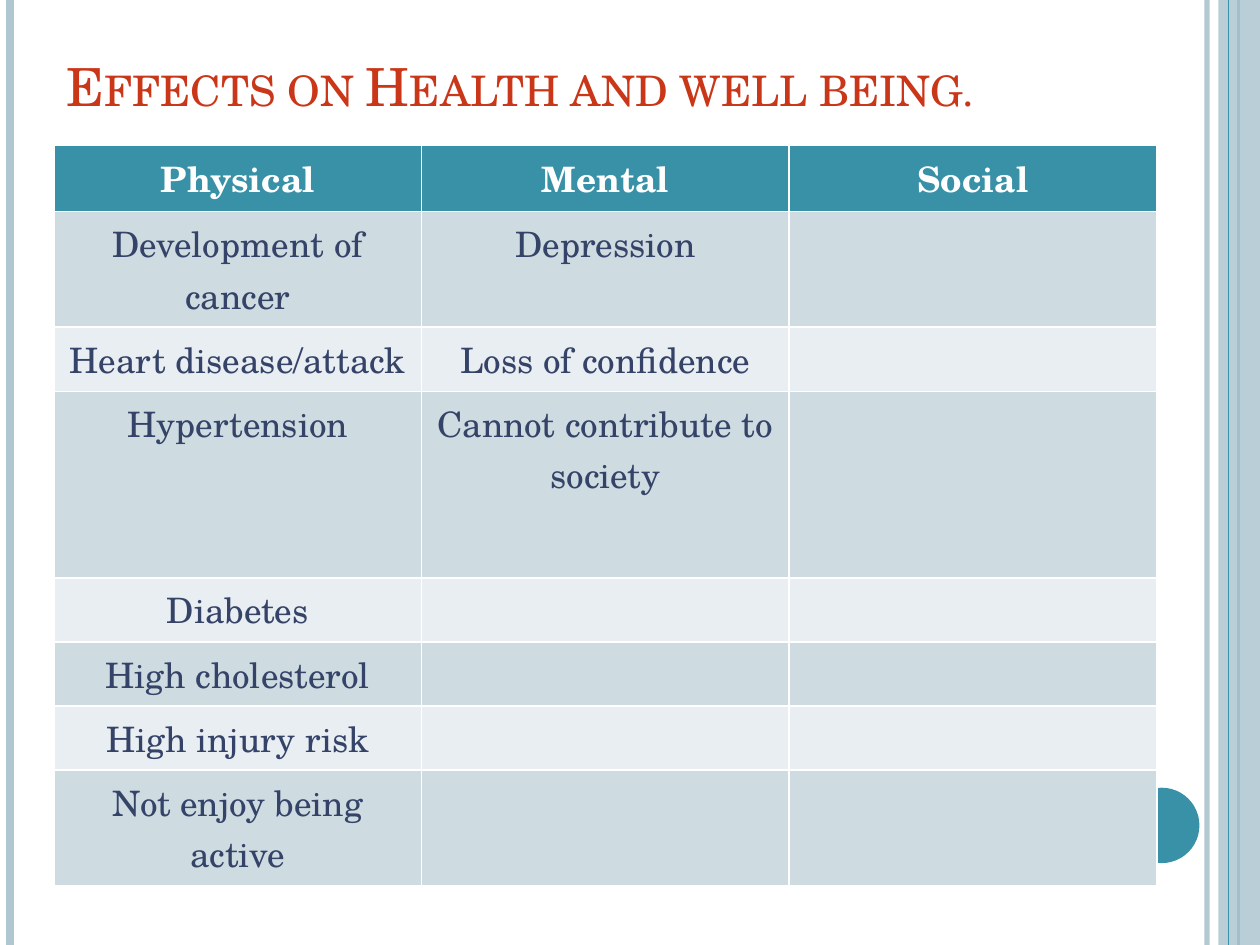
import dataclasses
import typing

import lxml.etree
import pptx
import pptx.dml.color
import pptx.enum.shapes
import pptx.enum.text
import pptx.oxml.ns
import pptx.util

Cm = pptx.util.Cm
RGBColor = pptx.dml.color.RGBColor

WHITE = RGBColor(0xFF, 0xFF, 0xFF)
TEAL = RGBColor(0x38, 0x91, 0xA7)
MIST = RGBColor(0xAF, 0xC7, 0xD0)
RED = RGBColor(0xCA, 0x36, 0x18)
NAVY = RGBColor(0x35, 0x43, 0x69)
BAND_DARK = RGBColor(0xCE, 0xDC, 0xE1)
BAND_LIGHT = RGBColor(0xE8, 0xEE, 0xF1)
FONT = "TeX Gyre Schola"
PAGE_WIDTH, PAGE_HEIGHT = Cm(25.4), Cm(19.05)
COLUMN_WIDTH = Cm(7.41)


@dataclasses.dataclass
class Stripe:
    x: float
    color: RGBColor
    weight: float
    opacity: int = 100


@dataclasses.dataclass
class Panel:
    kind: int
    left: float
    top: float
    width: float
    height: float
    color: RGBColor
    opacity: int = 100


@dataclasses.dataclass
class EffectRow:
    height: float
    physical: str
    mental: str = ""
    social: str = ""


DECORATIONS = [
    Stripe(24.33, MIST, 3, 93),
    Stripe(0.2, MIST, 4.5),
    Stripe(24.97, TEAL, 1.5),
    Panel(pptx.enum.shapes.MSO_SHAPE.RECTANGLE, 24.56, 0, 0.84, 19.05, MIST, 87),
    Stripe(24.77, TEAL, 0.75),
    Panel(pptx.enum.shapes.MSO_SHAPE.OVAL, 22.66, 15.88, 1.52, 1.52, TEAL),
]
EFFECTS = [
    EffectRow(1.17, "Physical", "Mental", "Social"),
    EffectRow(2.03, "Development of cancer", "Depression"),
    EffectRow(1.17, "Heart disease/attack", "Loss of confidence"),
    EffectRow(3.76, "Hypertension", "Cannot contribute to society"),
    EffectRow(1.17, "Diabetes"),
    EffectRow(1.17, "High cholesterol"),
    EffectRow(1.17, "High injury risk"),
    EffectRow(2.03, "Not enjoy being active"),
]


def set_opacity(shape: typing.Any, opacity: int) -> None:
    if opacity < 100:
        tag = pptx.oxml.ns.qn("a:srgbClr")
        color = next(shape.element.spPr.iter(tag))
        alpha = lxml.etree.SubElement(color, pptx.oxml.ns.qn("a:alpha"))
        alpha.set("val", str(opacity * 1000))


def draw_stripe(slide: typing.Any, stripe: Stripe) -> None:
    x = Cm(stripe.x)
    line = slide.shapes.add_connector(
        pptx.enum.shapes.MSO_CONNECTOR.STRAIGHT, x, 0, x, PAGE_HEIGHT
    )
    line.line.color.rgb = stripe.color
    line.line.width = pptx.util.Pt(stripe.weight)
    set_opacity(line, stripe.opacity)
    lxml.etree.SubElement(line.element.spPr, pptx.oxml.ns.qn("a:effectLst"))


def draw_panel(slide: typing.Any, panel: Panel) -> None:
    shape = slide.shapes.add_shape(
        panel.kind, Cm(panel.left), Cm(panel.top), Cm(panel.width), Cm(panel.height)
    )
    shape.shadow.inherit = False
    shape.fill.solid()
    shape.fill.fore_color.rgb = panel.color
    shape.line.fill.background()
    set_opacity(shape, panel.opacity)


def style_paragraph(
    paragraph: typing.Any, size: int, color: RGBColor, bold: bool, align: int
) -> None:
    paragraph.alignment = align
    paragraph.font.name = FONT
    paragraph.font.size = pptx.util.Pt(size)
    paragraph.font.color.rgb = color
    paragraph.font.bold = bold


def write_title(slide: typing.Any) -> None:
    title = slide.shapes.title
    title.left, title.top = Cm(1.09), Cm(-0.69)
    title.width, title.height = Cm(20.75), Cm(3.18)
    frame = title.text_frame
    frame.text = "Effects on Health and well being."
    frame.word_wrap = True
    frame.auto_size = pptx.enum.text.MSO_AUTO_SIZE.NONE
    frame.vertical_anchor = pptx.enum.text.MSO_ANCHOR.BOTTOM
    heading = frame.paragraphs[0]
    style_paragraph(heading, 30, RED, False, pptx.enum.text.PP_ALIGN.LEFT)
    next(title.element.iter(pptx.oxml.ns.qn("a:defRPr"))).set("cap", "small")


def draw_effects(slide: typing.Any, effects: list[EffectRow]) -> None:
    height = Cm(sum(effect.height for effect in effects))
    table = slide.shapes.add_table(
        len(effects), 3, Cm(1.09), Cm(2.92), COLUMN_WIDTH * 3, height
    ).table
    for column in table.columns:
        column.width = COLUMN_WIDTH
    for index, effect in enumerate(effects):
        table.rows[index].height = Cm(effect.height)
        header = index == 0
        band = TEAL if header else BAND_DARK if index % 2 else BAND_LIGHT
        texts = (effect.physical, effect.mental, effect.social)
        for cell, text in zip(table.rows[index].cells, texts):
            cell.fill.solid()
            cell.fill.fore_color.rgb = band
            if text:
                cell.text = text
            style_paragraph(
                cell.text_frame.paragraphs[0],
                20,
                WHITE if header else NAVY,
                header,
                pptx.enum.text.PP_ALIGN.CENTER,
            )


def main() -> None:
    presentation = pptx.Presentation()
    presentation.slide_width, presentation.slide_height = PAGE_WIDTH, PAGE_HEIGHT
    slide = presentation.slides.add_slide(presentation.slide_layouts[5])
    slide.background.fill.solid()
    slide.background.fill.fore_color.rgb = WHITE
    for decoration in DECORATIONS:
        if isinstance(decoration, Stripe):
            draw_stripe(slide, decoration)
        else:
            draw_panel(slide, decoration)
    write_title(slide)
    draw_effects(slide, EFFECTS)
    presentation.save("out.pptx")


if __name__ == "__main__":
    main()
